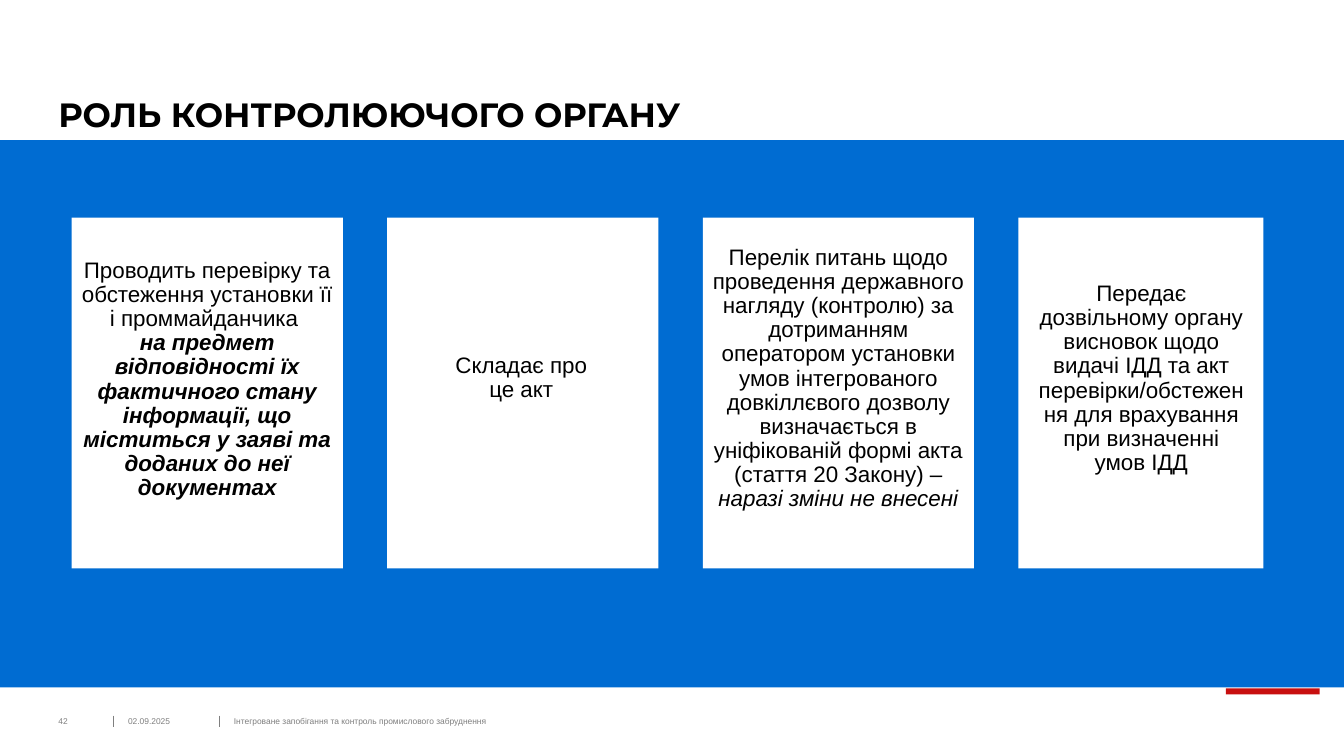
from lxml import etree
from pptx import Presentation
from pptx.dml.color import RGBColor
from pptx.enum.shapes import MSO_CONNECTOR, MSO_SHAPE
from pptx.enum.text import MSO_ANCHOR, PP_ALIGN
from pptx.oxml.ns import qn
from pptx.util import Inches, Pt

COLORS = {"blue": "006CD2", "red": "C80F0F", "gray": "7F7F7F",
          "white": "FFFFFF", "black": "000000"}
CARD_PITCH = 3.13
CARDS = [
    (2.69, 0, 0.36, 2.69, 2.52, [
        [("Проводить перевірку та обстеження установки її і проммайданчика ", False, False)],
        [("на предмет відповідності їх фактичного стану інформації, що міститься "
          "у заяві та доданих до неї документах", True, True)]]),
    (2.69, 0.47, 1.3, 1.72, 0.59, [[("Складає про це акт", False, False)]]),
    (2.69, 0, 0.23, 2.69, 3.01, [
        [("Перелік питань щодо проведення державного нагляду (контролю) за дотриманням "
          "оператором установки умов інтегрованого довкіллєвого дозволу визначається "
          "в уніфікованій формі акта (стаття 20 Закону) – ", False, False),
         ("наразі зміни не внесені", False, True)]]),
    (2.43, 0.07, 0.59, 2.3, 2.04, [
        [("Передає дозвільному органу висновок щодо видачі ІДД та акт "
          "перевірки/обстеження для врахування при визначенні умов ІДД", False, False)]]),
]
FOOTER = [
    (0, 0.51, "42"),
    (0.69, 0.79, "02.09.2025"),
    (1.74, 7.48, "Інтегроване запобігання та контроль промислового забруднення"),
]


def rgb(name):
    return RGBColor.from_string(COLORS[name])


def add_rect(slide, x, y, w, h, color):
    sp = slide.shapes.add_shape(MSO_SHAPE.RECTANGLE, Inches(x), Inches(y), Inches(w), Inches(h))
    sp.shadow.inherit = False
    sp.fill.solid()
    sp.fill.fore_color.rgb = rgb(color)
    sp.line.fill.background()


def add_text(slide, x, y, w, h, paragraphs, size, color="black", font="Arial",
             anchor=MSO_ANCHOR.TOP, align=PP_ALIGN.LEFT, spacing=0.9, insets=(0, 0)):
    tf = slide.shapes.add_textbox(Inches(x), Inches(y), Inches(w), Inches(h)).text_frame
    tf.word_wrap = True
    tf.vertical_anchor = anchor
    tf.margin_left = tf.margin_right = Inches(insets[0])
    tf.margin_top = tf.margin_bottom = Inches(insets[1])
    for i, runs in enumerate(paragraphs):
        p = tf.add_paragraph() if i else tf.paragraphs[0]
        p.alignment = align
        p.line_spacing = spacing
        for text, bold, italic in runs:
            r = p.add_run()
            r.text = text
            r.font.name = font
            r.font.size = Pt(size)
            r.font.bold = bold
            r.font.italic = italic
            r.font.color.rgb = rgb(color)


def add_title(slide, x, y, w, h):
    add_text(slide, x, y, w, h, [[("РОЛЬ КОНТРОЛЮЮЧОГО ОРГАНУ", True, False)]], 24,
             font="Montserrat", anchor=MSO_ANCHOR.BOTTOM)


def add_panel(slide, x, y, w, h):
    add_rect(slide, x, y, w, h, "blue")
    top = y + 0.77
    for i, (card_w, dx, dy, text_w, text_h, paragraphs) in enumerate(CARDS):
        left = x + 0.71 + i * CARD_PITCH
        add_rect(slide, left, top, card_w, 3.48, "white")
        add_text(slide, left + dx, top + dy, text_w, text_h, paragraphs, 16,
                 align=PP_ALIGN.CENTER, insets=(0.1, 0.05))


def add_divider(slide, x, y, h):
    line = slide.shapes.add_connector(MSO_CONNECTOR.STRAIGHT, Inches(x), Inches(y),
                                      Inches(x), Inches(y + h))
    line.line.color.rgb = rgb("gray")
    line.line.width = Pt(0.75)
    etree.SubElement(line._element.spPr, qn("a:effectLst"))


def add_footer(slide, x, y, h):
    for i, (dx, w, text) in enumerate(FOOTER):
        if i:
            add_divider(slide, x + dx - 0.14, y, h + 0.01)
        add_text(slide, x + dx, y, w, h, [[(text, False, False)]], 6, "gray",
                 anchor=MSO_ANCHOR.MIDDLE, spacing=1.0)


def main():
    prs = Presentation()
    prs.slide_width, prs.slide_height = Inches(13.33), Inches(7.5)
    slide = prs.slides.add_slide(prs.slide_layouts[6])
    add_rect(slide, 12.16, 6.83, 0.93, 0.06, "red")
    add_panel(slide, 0, 1.39, 13.33, 5.43)
    add_title(slide, 0.58, 0.4, 8.03, 0.94)
    add_footer(slide, 0.58, 7.1, 0.1)
    prs.save("out.pptx")


if __name__ == "__main__":
    main()
